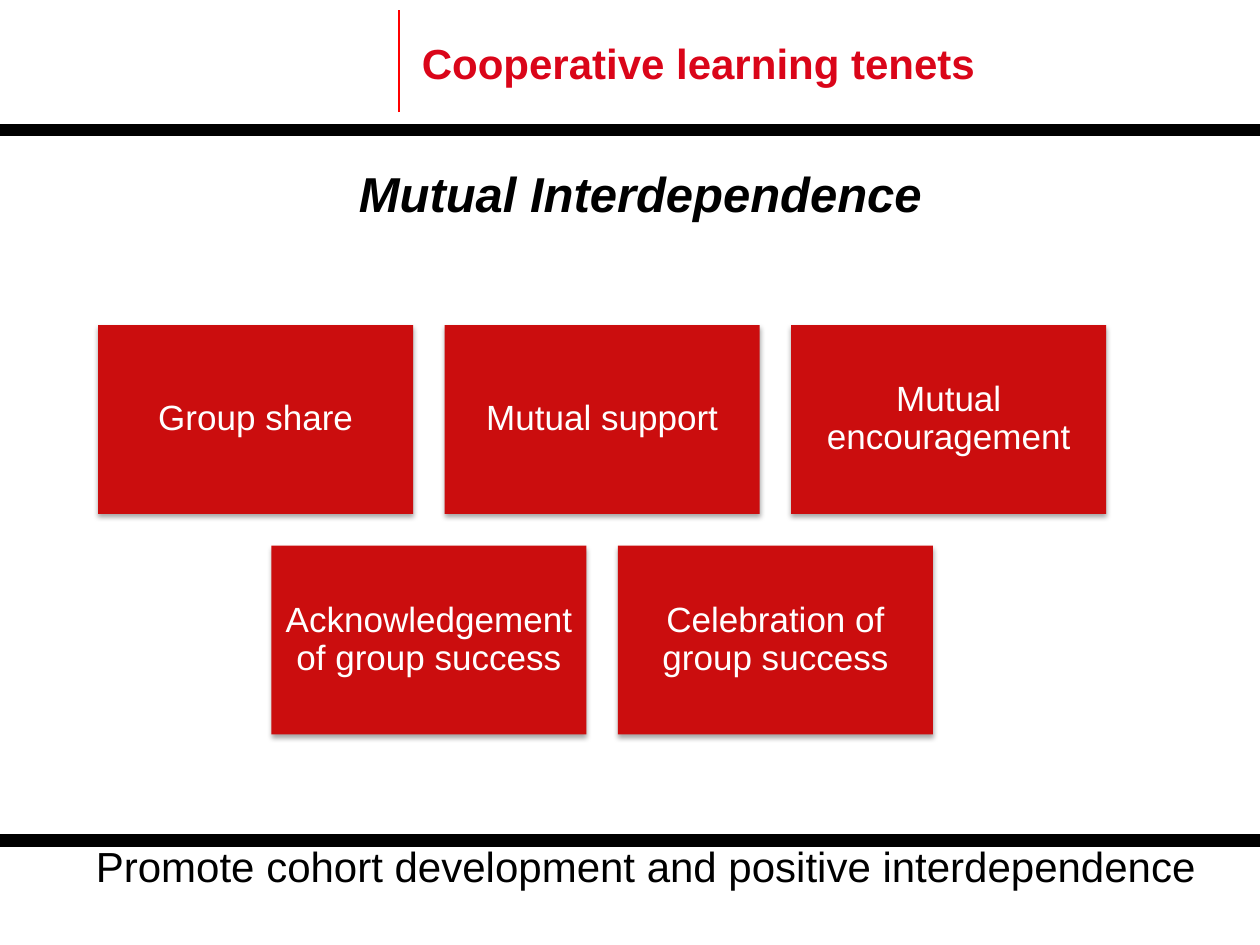
import dataclasses

import lxml.etree
import pptx
import pptx.dml.color
import pptx.enum.shapes
import pptx.enum.text
import pptx.oxml
import pptx.oxml.ns
import pptx.util

ANCHOR = pptx.enum.text.MSO_ANCHOR
FIT = pptx.enum.text.MSO_AUTO_SIZE
CENTER = pptx.enum.text.PP_ALIGN.CENTER
CELL = pptx.util.Inches(0.25)
COLUMNS, ROWS = 40, 30


@dataclasses.dataclass(frozen=True)
class Theme:
    font: str = "Arial"
    black: str = "000000"
    white: str = "FFFFFF"
    divider: str = "FF0000"
    title: str = "DA0519"
    card: str = "CB0D0E"
    title_size: int = 24
    heading_size: int = 28
    card_size: int = 20
    divider_width: float = 1.25
    rule_width: float = 7


THEME = Theme()


def grid(*cells):
    """Turn columns and rows into slide lengths."""
    return [round(cell * CELL) for cell in cells]


def rgb(code):
    return pptx.dml.color.RGBColor.from_string(code)


def apply(target, values):
    for name, value in values.items():
        setattr(target, name, value)


def write(frame, wording, size, color, frame_format, paragraph_format=None, **font_format):
    apply(frame, frame_format)
    paragraph = frame.paragraphs[0]
    apply(paragraph, paragraph_format or {})
    run = paragraph.add_run()
    run.text = wording
    apply(run.font, {"name": THEME.font, "size": pptx.util.Pt(size), **font_format})
    run.font.color.rgb = rgb(color)


def add_rule(slide, start, end, color, width):
    rule = slide.shapes.add_connector(
        pptx.enum.shapes.MSO_CONNECTOR.STRAIGHT, *grid(*start, *end))
    rule.line.color.rgb = rgb(color)
    rule.line.width = pptx.util.Pt(width)
    lxml.etree.SubElement(rule._element.spPr, pptx.oxml.ns.qn("a:effectLst"))


def add_label(slide, box, *wording, **formats):
    label = slide.shapes.add_textbox(*grid(*box))
    write(label.text_frame, *wording, **formats)


def add_soft_shadow(shape):
    shape.shadow.inherit = False
    effects = shape._element.spPr.find(pptx.oxml.ns.qn("a:effectLst"))
    effects.append(pptx.oxml.parse_xml(
        f'<a:outerShdw {pptx.oxml.ns.nsdecls("a")} blurRad="{pptx.util.Pt(3.1)}" '
        f'dist="{pptx.util.Pt(1.8)}" dir="5400000" rotWithShape="0">'
        f'<a:srgbClr val="{THEME.black}"><a:alpha val="35000"/></a:srgbClr></a:outerShdw>'))


def add_header(slide, box):
    left, top, width, height = box
    # Divider beside the title, and the rule that closes the band
    divider_x = left + 12.68
    add_rule(slide, (divider_x, top + 3.56), (divider_x, top + 0.32),
             THEME.divider, THEME.divider_width)
    add_rule(slide, (left, top + height), (left + width, top + height),
             THEME.black, THEME.rule_width)
    add_label(slide, (left + 13, top + 1, 18.52, 2), "Cooperative learning tenets",
              THEME.title_size, THEME.title,
              frame_format={"word_wrap": False, "auto_size": FIT.SHAPE_TO_FIT_TEXT}, bold=True)


def add_heading(slide, box):
    add_label(slide, box, "Mutual Interdependence", THEME.heading_size, THEME.black,
              frame_format={"word_wrap": False, "auto_size": FIT.SHAPE_TO_FIT_TEXT},
              bold=True, italic=True)


def add_card(slide, box, tenet):
    card = slide.shapes.add_shape(pptx.enum.shapes.MSO_SHAPE.RECTANGLE, *grid(*box))
    card.fill.solid()
    card.fill.fore_color.rgb = rgb(THEME.card)
    card.line.fill.background()
    add_soft_shadow(card)
    inset = pptx.util.Inches(0.08)
    sides = ("left", "right", "top", "bottom")
    write(card.text_frame, tenet, THEME.card_size, THEME.white,
          frame_format={"word_wrap": True, "vertical_anchor": ANCHOR.MIDDLE,
                        **{f"margin_{side}": inset for side in sides}},
          paragraph_format={"alignment": CENTER, "line_spacing": 0.9})


def add_tenets(slide, box, tenet_rows, gap=1):
    left, top, width, height = box
    most = max(len(tenets) for tenets in tenet_rows)
    card_width = (width - gap * (most - 1)) / most
    card_height = (height - gap * (len(tenet_rows) - 1)) / len(tenet_rows)
    for row, tenets in enumerate(tenet_rows):
        # A shorter row is centred under the full one
        indent = (most - len(tenets)) * (card_width + gap) / 2
        for column, tenet in enumerate(tenets):
            add_card(slide, (left + indent + column * (card_width + gap),
                             top + row * (card_height + gap),
                             card_width, card_height), tenet)


def add_footer(slide, box):
    left, top, width, height = box
    add_rule(slide, (left, top), (left + width, top), THEME.black, THEME.rule_width)
    add_label(slide, (left + 1, top - 0.2, width - 1, 2),
              "Promote cohort development and positive interdependence",
              THEME.title_size, THEME.black,
              frame_format={"word_wrap": True, "auto_size": FIT.SHAPE_TO_FIT_TEXT},
              paragraph_format={"alignment": CENTER})


def main():
    deck = pptx.Presentation()
    apply(deck, {"slide_width": COLUMNS * CELL, "slide_height": ROWS * CELL})
    slide = deck.slides.add_slide(deck.slide_layouts[6])

    add_header(slide, (0, 0, COLUMNS, 4.12))
    add_heading(slide, (11, 5, 19.24, 2.28))
    add_tenets(slide, (3.12, 10.32, 32, 13), [
        ["Group share", "Mutual support", "Mutual encouragement"],
        ["Acknowledgement of group success", "Celebration of group success"],
    ])
    add_footer(slide, (0, 26.68, COLUMNS, 3.32))

    deck.save("out.pptx")


if __name__ == "__main__":
    main()
